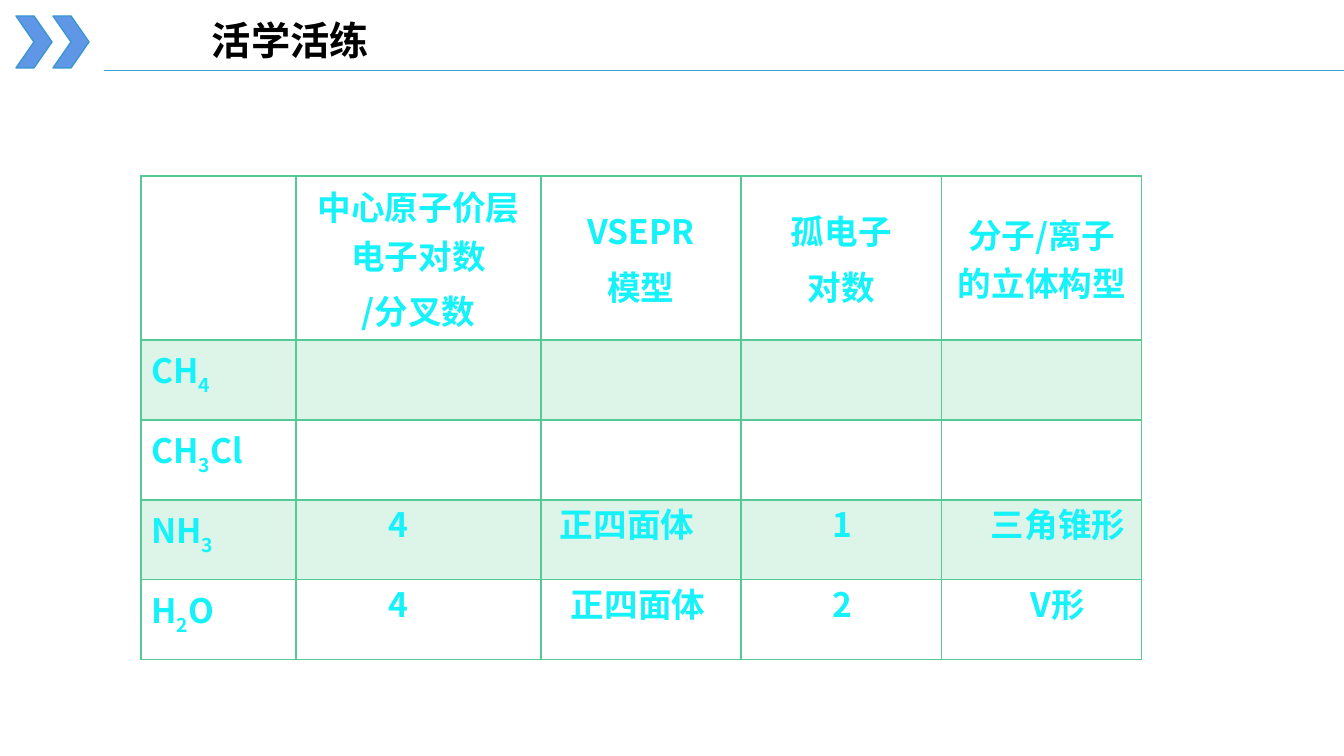
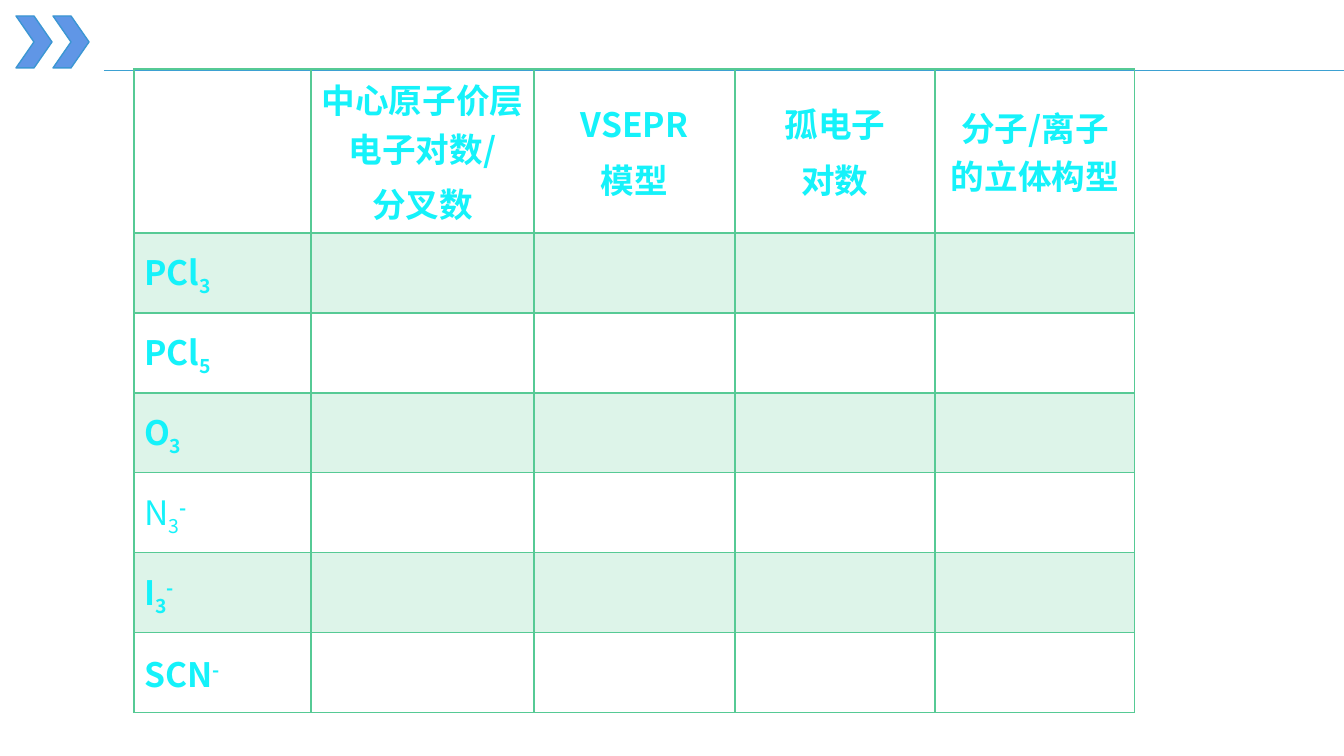
from lxml import etree
from pptx import Presentation
from pptx.dml.color import RGBColor
from pptx.enum.shapes import MSO_CONNECTOR, MSO_SHAPE
from pptx.enum.text import MSO_ANCHOR, MSO_AUTO_SIZE, PP_ALIGN
from pptx.oxml.ns import qn
from pptx.util import Pt

EMU_PER_PX = 914400 / 100.8
SLIDE_W, SLIDE_H = 1344, 756

BLACK = RGBColor(0x00, 0x00, 0x00)
CYAN = RGBColor(0x15, 0xF2, 0xFA)
GREEN = RGBColor(0x56, 0xCA, 0x95)
CHEVRON_FILL = RGBColor(0x60, 0x96, 0xE6)
CHEVRON_EDGE = RGBColor(0x3B, 0x96, 0xD3)
RULE_BLUE = RGBColor(0x3D, 0xA1, 0xD2)

FONT = "Noto Sans CJK SC"
CHEVRON, STRAIGHT = MSO_SHAPE.CHEVRON, MSO_CONNECTOR.STRAIGHT
TOP, MIDDLE = MSO_ANCHOR.TOP, MSO_ANCHOR.MIDDLE
LEFT, CENTER = PP_ALIGN.LEFT, PP_ALIGN.CENTER
FIT_SHAPE = MSO_AUTO_SIZE.SHAPE_TO_FIT_TEXT

HEADER_H, ROW_H = 164, 80
BASELINES = {"_": "-25000", "^": "30000"}
COMMON_HEADINGS = [["VSEPR", "模型"], ["孤电子", "对数"], ["分子/离子的立体构型"]]

# Formula parts are split by "|": "_" lowers, "^" raises, "~" makes light.
PRACTICE_FORMULAS = ["CH|_4", "CH|_3|Cl", "NH|_3", "H|_2|O"]
FURTHER_FORMULAS = ["PCl|_3", "PCl|_5", "O|_3", "~N|~_3|^-", "I|_3|^-", "SCN|^-"]

# Each answer line: top, then (left, width, text) for every answer.
ANSWERS = [
    (499, [(379, 41, "4"), (550, 155, "正四面体"),
           (823, 41, "1"), (981, 155, "三角锥形")]),
    (579, [(379, 41, "4"), (561, 155, "正四面体"),
           (823, 41, "2"), (1021, 76, "V形")]),
]


def px(length):
    return round(length * EMU_PER_PX)


def box(*lengths):
    return [px(length) for length in lengths]


def style_paragraph(paragraph, size, color, align=LEFT):
    paragraph.alignment = align
    font = paragraph.font
    font.name, font.size, font.bold = FONT, Pt(size), True
    font.color.rgb = color
    east_asian = etree.SubElement(font._element, qn("a:ea"))
    east_asian.set("typeface", FONT)


def add_label(slide, left, top, width, height, text, size, color):
    frame = slide.shapes.add_textbox(*box(left, top, width, height)).text_frame
    frame.word_wrap = False
    frame.auto_size = FIT_SHAPE
    frame.text = text
    style_paragraph(frame.paragraphs[0], size, color)


def add_banner(slide):
    """Draw the double chevron and the thin rule below the title."""
    chevrons = slide.shapes.add_group_shape()
    for left in (16, 53):
        chevron = chevrons.shapes.add_shape(CHEVRON, *box(left, 16, 36, 52))
        chevron.shadow.inherit = False
        chevron.fill.solid()
        chevron.fill.fore_color.rgb = CHEVRON_FILL
        chevron.line.color.rgb = CHEVRON_EDGE
        chevron.line.width = Pt(1)
    rule = slide.shapes.add_connector(STRAIGHT, *box(104, 70, SLIDE_W, 70))
    rule.line.color.rgb = RULE_BLUE
    rule.line.width = Pt(0.5)
    etree.SubElement(rule._element.spPr, qn("a:effectLst"))


def style_cell(cell, shaded, bottom_width):
    properties = cell._tc.get_or_add_tcPr()
    for side in ("lnL", "lnR", "lnT", "lnB"):
        width = bottom_width if side == "lnB" else 1
        border = etree.SubElement(properties, qn(f"a:{side}"), w=str(Pt(width)))
        solid = etree.SubElement(border, qn("a:solidFill"))
        etree.SubElement(solid, qn("a:srgbClr"), val=str(GREEN))
    if shaded:
        cell.fill.solid()
        cell.fill.fore_color.rgb = GREEN
        tint = properties.find(qn("a:solidFill"))[0]
        etree.SubElement(tint, qn("a:alpha"), val="20000")
    else:
        cell.fill.background()


def write_heading(cell, lines):
    cell.vertical_anchor = MIDDLE
    frame = cell.text_frame
    for index, line in enumerate(lines):
        paragraph = frame.add_paragraph() if index else frame.paragraphs[0]
        paragraph.text = line
        if index:
            paragraph.space_before = Pt(4.8)
        style_paragraph(paragraph, 24, CYAN, CENTER)


def write_formula(cell, formula, anchor):
    cell.vertical_anchor = anchor
    paragraph = cell.text_frame.paragraphs[0]
    style_paragraph(paragraph, 24, CYAN)
    for part in formula.split("|"):
        run = paragraph.add_run()
        if part.startswith("~"):
            run.font.bold = False
            part = part[1:]
        if part[0] in BASELINES:
            run.font._element.set("baseline", BASELINES[part[0]])
            part = part[1:]
        run.text = part


def add_vsepr_table(slide, left, top, widths, pair_heading, formulas, anchor):
    rows = len(formulas) + 1
    height = HEADER_H + ROW_H * len(formulas)
    table = slide.shapes.add_table(
        rows, len(widths), *box(left, top, sum(widths), height)).table
    table.first_row = table.horz_banding = False
    for column, width in zip(table.columns, widths):
        column.width = px(width)
    for index, row in enumerate(table.rows):
        row.height = px(ROW_H if index else HEADER_H)
        for cell in row.cells:
            style_cell(cell, index % 2 == 1, 1 if index else 2)
    for column, lines in enumerate([pair_heading] + COMMON_HEADINGS, 1):
        write_heading(table.cell(0, column), lines)
    for row, formula in enumerate(formulas, 1):
        write_formula(table.cell(row, 0), formula, anchor)


def build_practice_slide(slide):
    add_banner(slide)
    add_vsepr_table(slide, 141, 176, [155, 245, 200, 201, 200],
                    ["中心原子价层电子对数", "/分叉数"], PRACTICE_FORMULAS, TOP)
    add_label(slide, 202, 11, 177, 57, "活学活练", 28, BLACK)
    for top, answers in ANSWERS:
        for left, width, text in answers:
            add_label(slide, left, top, width, 50, text, 24, CYAN)


def build_further_slide(slide):
    add_banner(slide)
    add_vsepr_table(slide, 134, 69, [177, 223, 201, 200, 200],
                    ["中心原子价层电子对数/", "分叉数"], FURTHER_FORMULAS, MIDDLE)


def main():
    deck = Presentation()
    deck.slide_width, deck.slide_height = box(SLIDE_W, SLIDE_H)
    blank = deck.slide_layouts[6]
    for build in (build_practice_slide, build_further_slide):
        build(deck.slides.add_slide(blank))
    deck.save("out.pptx")


if __name__ == "__main__":
    main()
